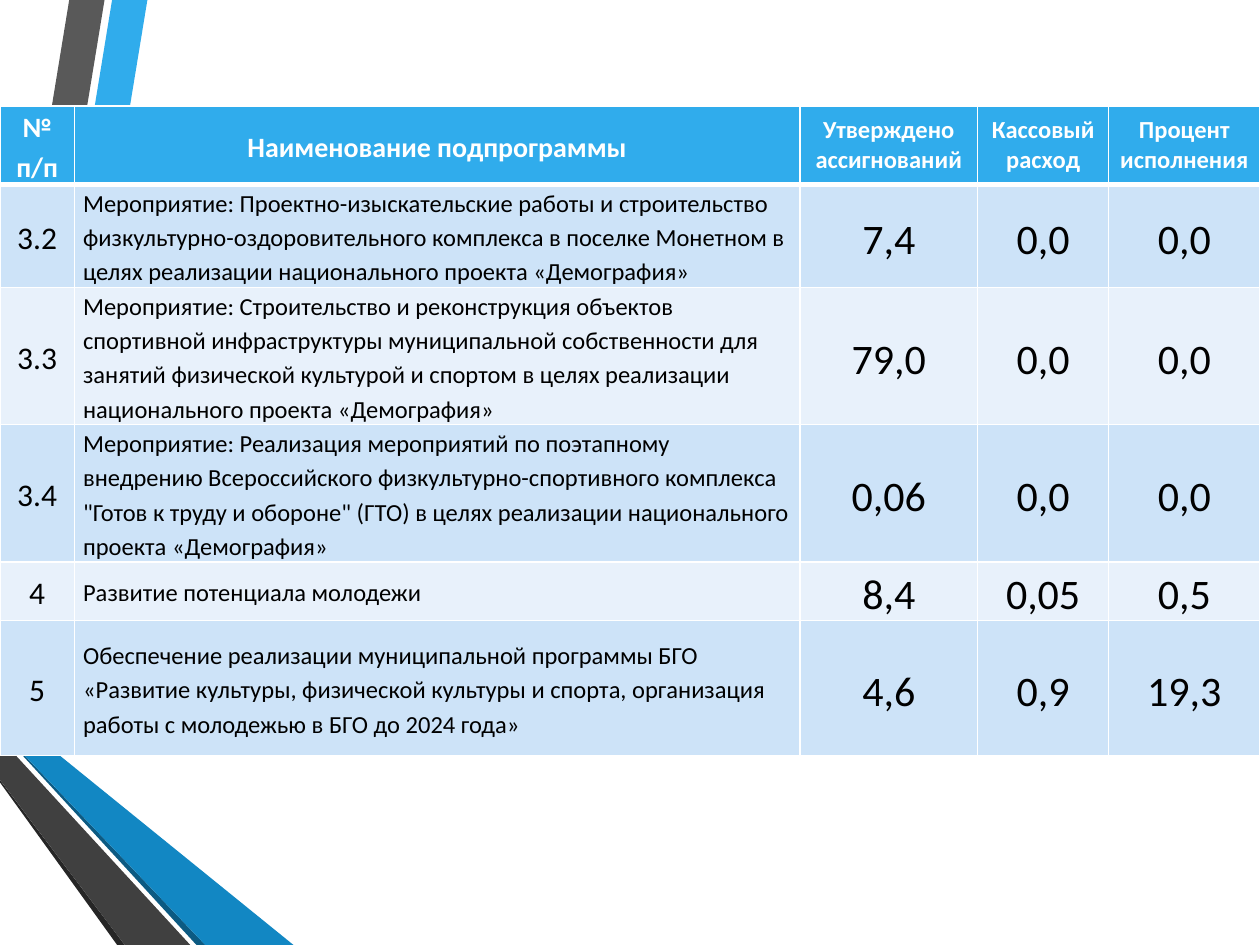
import pptx
import pptx.util
import pptx.dml.color
import pptx.enum.text
import pptx.oxml
from pptx.oxml.ns import nsdecls

COLS, ROWS = 1000, 750  # layout grid over the slide
HEADER, BANDS = "30ACEC", ("CDE3F8", "E8F1FB")
ALIGN = pptx.enum.text.PP_ALIGN

RIBBONS = [
    ("30ACEC", [(0, 544), (0, 575), (22, 579), (117, 0), (89, 0)]),
    ("595959", [(83, 0), (55, 0), (0, 336), (0, 506)]),
    ("262626", [(0, 619), (0, 621), (93, 750), (99, 750)]),
    ("0C5A82", [(0, 579), (0, 580), (156, 750), (163, 750)]),
    ("1287C3", [(0, 579), (163, 750), (233, 750), (22, 579), (0, 575)]),
    ("404040", [(0, 619), (99, 750), (151, 750), (0, 586)]),
]
COL_SHARES = [0.059, 0.576, 0.141, 0.104, 0.12]
ROW_HEIGHTS = [54, 72, 96, 96, 39, 107]
DATA = [
    ["№ п/п", "Наименование подпрограммы", "Утверждено ассигнований",
     "Кассовый расход", "Процент исполнения"],
    ["3.2", "Мероприятие: Проектно-изыскательские работы и строительство "
     "физкультурно-оздоровительного комплекса в поселке Монетном в целях "
     "реализации национального проекта «Демография»", "7,4", "0,0", "0,0"],
    ["3.3", "Мероприятие: Строительство и реконструкция объектов спортивной "
     "инфраструктуры муниципальной собственности для занятий физической "
     "культурой и спортом в целях реализации национального проекта "
     "«Демография»", "79,0", "0,0", "0,0"],
    ["3.4", "Мероприятие: Реализация мероприятий по поэтапному внедрению "
     "Всероссийского физкультурно-спортивного комплекса \"Готов к труду и "
     "обороне\" (ГТО) в целях реализации национального проекта «Демография»",
     "0,06", "0,0", "0,0"],
    ["4", "Развитие потенциала молодежи", "8,4", "0,05", "0,5"],
    ["5", "Обеспечение реализации муниципальной программы БГО «Развитие "
     "культуры, физической культуры и спорта, организация работы с молодежью "
     "в БГО до 2024 года»", "4,6", "0,9", "19,3"],
]


def rgb(value):
    return pptx.dml.color.RGBColor.from_string(value)


def apply(target, formats):
    for name, value in formats.items():
        setattr(target, name, value)


def add_ribbons(s, box):
    """Slanted bands along the left edge."""
    left, top, width, height = box
    for color, points in RIBBONS:
        pts = [(left + width * x // COLS, top + height * y // ROWS)
               for x, y in points]
        builder = s.shapes.build_freeform(*pts[0])
        builder.add_line_segments(pts[1:], close=True)
        sp = builder.convert_to_shape()
        sp.shadow.inherit = False
        sp.fill.solid()
        sp.fill.fore_color.rgb = rgb(color)
        sp.line.fill.background()


def set_borders(cell, bottom):
    tcPr = cell._tc.get_or_add_tcPr()
    for side, width in (("L", 1), ("R", 1), ("T", 1), ("B", bottom)):
        tcPr.append(pptx.oxml.parse_xml(
            f'<a:ln{side} {nsdecls("a")} w="{pptx.util.Pt(width)}"><a:solidFill>'
            f'<a:srgbClr val="FFFFFF"/></a:solidFill></a:ln{side}>'))


def fill_cell(cell, text, row, col):
    header = row == 0
    if header:
        size = 16 if col < 2 else 14
    else:
        size = (18, 14, 24, 24, 24)[col]
    inset = pptx.util.Inches(0.07)
    apply(cell, dict(text=text, margin_left=inset, margin_right=inset,
                     margin_top=0, margin_bottom=0,
                     vertical_anchor=pptx.enum.text.MSO_ANCHOR.MIDDLE))
    p = cell.text_frame.paragraphs[0]
    apply(p, dict(
        alignment=ALIGN.LEFT if col == 1 and not header else ALIGN.CENTER,
        line_spacing=1.0 if header and col > 1 else 1.15))
    r = p.runs[0]
    apply(r.font, dict(name="Calibri", size=pptx.util.Pt(size), bold=header))
    r.font.color.rgb = rgb("FFFFFF" if header else "000000")
    set_borders(cell, 3 if header or row == 0 else 1)
    cell.fill.solid()
    cell.fill.fore_color.rgb = rgb(HEADER if header else BANDS[(row - 1) % 2])


def add_budget_table(s, box):
    """Budget execution by subprogramme."""
    left, top, width, height = box
    table = s.shapes.add_table(len(DATA), len(COL_SHARES), *box).table
    for column, share in zip(table.columns, COL_SHARES):
        column.width = int(width * share)
    for row, units in zip(table.rows, ROW_HEIGHTS):
        row.height = height * units // sum(ROW_HEIGHTS)
    for i, texts in enumerate(DATA):
        for j, text in enumerate(texts):
            fill_cell(table.cell(i, j), text, i, j)


def main():
    prs = pptx.Presentation()
    prs.slide_width = pptx.util.Inches(10)
    prs.slide_height = pptx.util.Inches(7.5)
    w, h = prs.slide_width, prs.slide_height
    s = prs.slides.add_slide(prs.slide_layouts[6])
    add_ribbons(s, (0, 0, w, h))
    add_budget_table(s, (0, h * 84 // ROWS, w, h * sum(ROW_HEIGHTS) // ROWS))
    prs.save("out.pptx")


if __name__ == "__main__":
    main()
